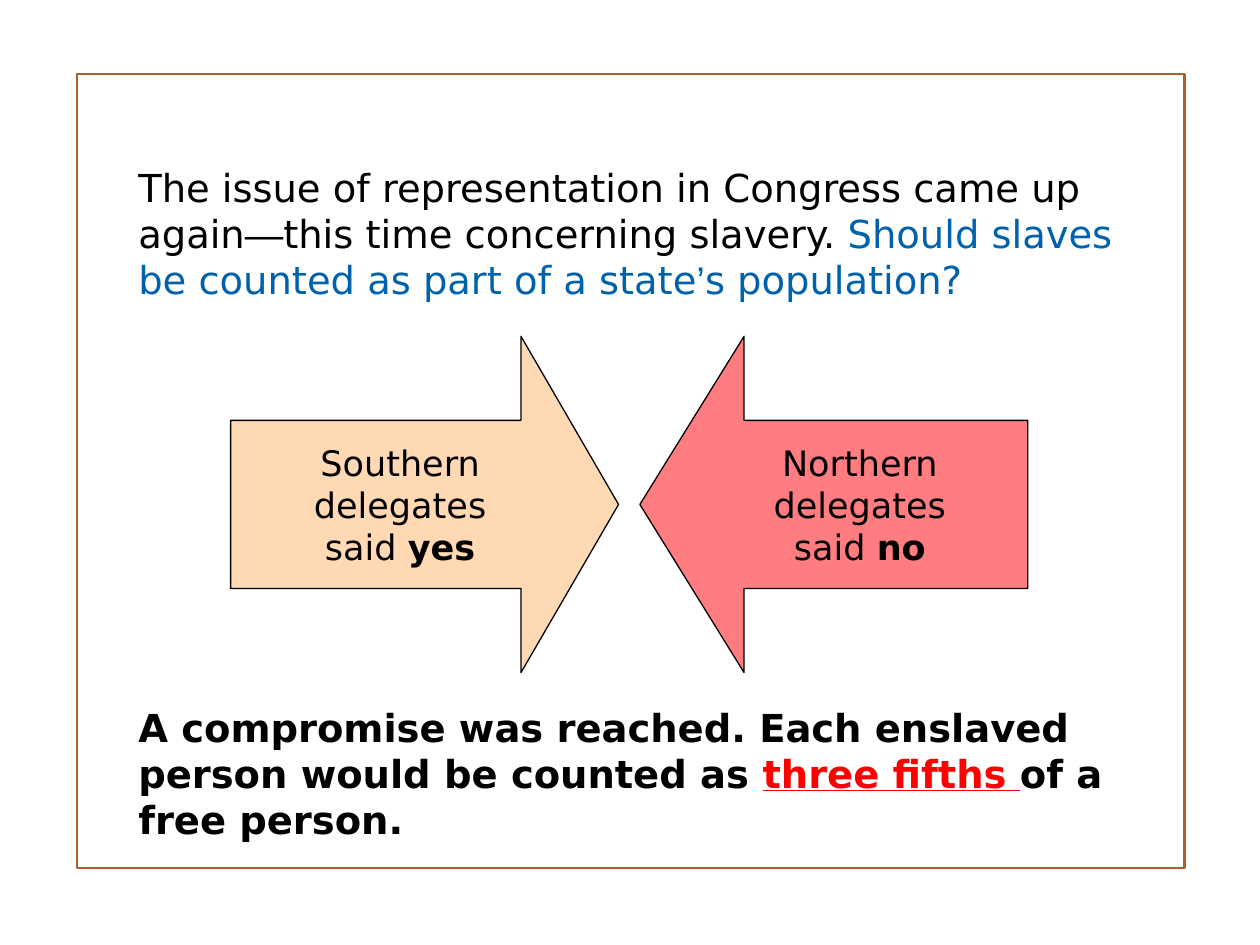
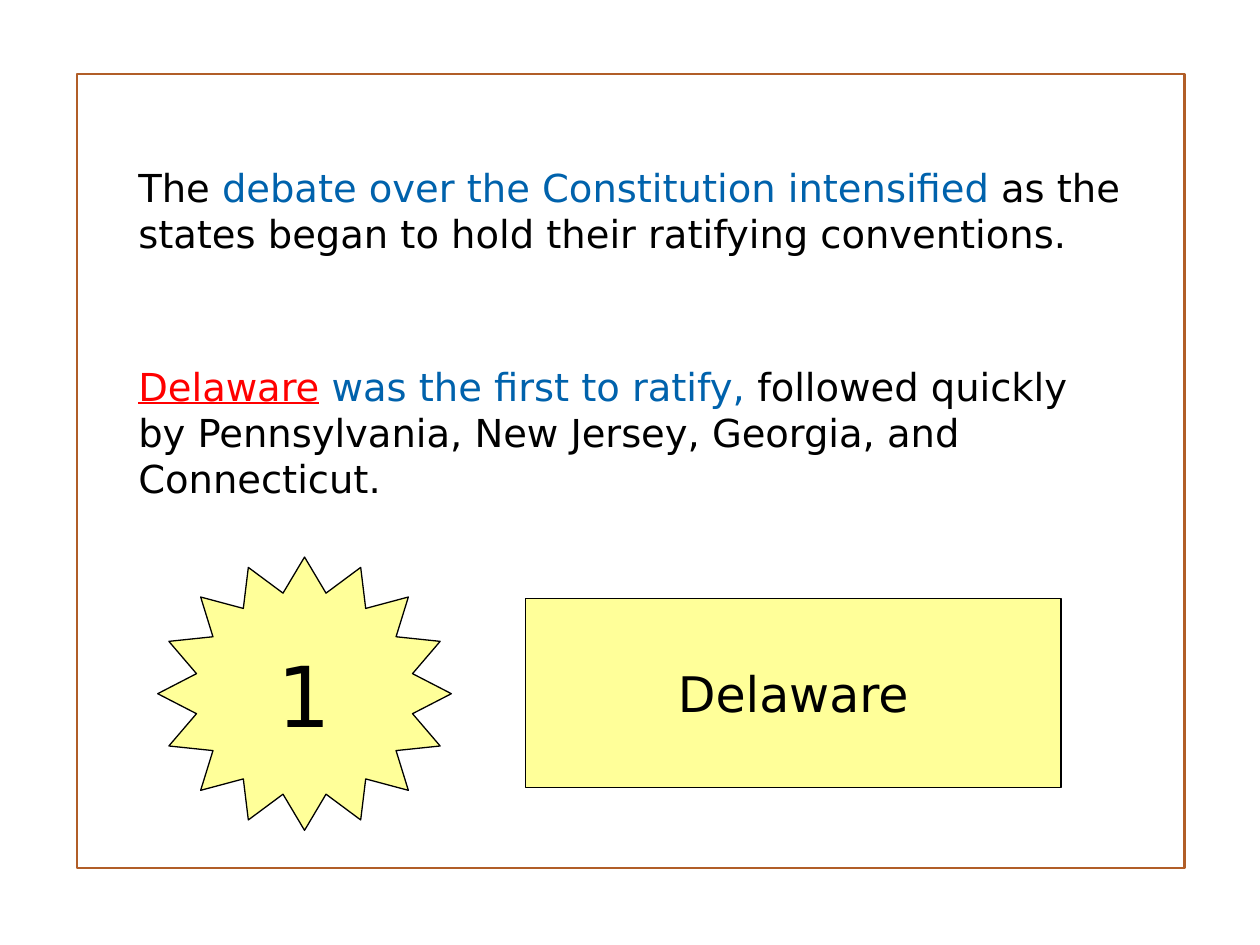
from dataclasses import dataclass
from typing import Optional

from lxml.etree import SubElement
from pptx import Presentation
from pptx.dml.color import RGBColor
from pptx.enum.shapes import MSO_SHAPE
from pptx.enum.text import MSO_ANCHOR, MSO_AUTO_SIZE, PP_ALIGN
from pptx.oxml.ns import qn
from pptx.util import Cm, Pt

# Shared style
FONT, PUNCTUATION_FONT = "DejaVu Sans", "Arial"
BLACK, BLUE, RED, BROWN = "000000", "0062AC", "FF0000", "B15E28"
ORANGE, PINK, YELLOW = "FFCC99", "FF7C80", "FFFF99"
TEXT_LEFT, TEXT_WIDTH, TEXT_SIZE = 2.54, 20.32, 22


@dataclass(frozen=True)
class Phrase:
    text: str
    colour: str = BLACK
    bold: bool = False
    underline: bool = False
    font: str = FONT


@dataclass(frozen=True)
class Passage:
    top: float
    height: float
    phrases: tuple[Phrase, ...]


@dataclass(frozen=True)
class Figure:
    kind: MSO_SHAPE
    box: tuple[float, float, float, float]
    fill: str
    size: int
    lines: tuple[tuple[Phrase, ...], ...]
    adjustments: tuple[float, ...] = ()
    opacity: Optional[int] = None


def colour(value: str) -> RGBColor:
    return RGBColor.from_string(value)


def write_phrases(paragraph, phrases: tuple[Phrase, ...], size: int) -> None:
    for phrase in phrases:
        run = paragraph.add_run()
        run.text = phrase.text
        run.font.name = phrase.font
        run.font.size = Pt(size)
        run.font.bold = phrase.bold
        run.font.underline = phrase.underline
        run.font.color.rgb = colour(phrase.colour)


def add_outlined(slide, kind: MSO_SHAPE, box: tuple[float, ...], line: str, width: float):
    outlined = slide.shapes.add_shape(kind, *map(Cm, box))
    outlined.shadow.inherit = False
    outlined.line.color.rgb = colour(line)
    outlined.line.width = Pt(width)
    return outlined


def add_frame_to_layout(slide) -> None:
    """Draw the border and move it behind everything in the shared layout."""
    frame = add_outlined(slide, MSO_SHAPE.RECTANGLE, (1.55, 1.5, 22.33, 16), BROWN, 1.25)
    frame.fill.background()
    frame.element.nvSpPr.cNvPr.id = 20
    slide.slide_layout.element.cSld.spTree.insert(2, frame.element)


def add_passage(slide, passage: Passage) -> None:
    box = (TEXT_LEFT, passage.top, TEXT_WIDTH, passage.height)
    frame = slide.shapes.add_textbox(*map(Cm, box)).text_frame
    frame.word_wrap = True
    frame.auto_size = MSO_AUTO_SIZE.SHAPE_TO_FIT_TEXT
    write_phrases(frame.paragraphs[0], passage.phrases, TEXT_SIZE)


def add_figure(slide, figure: Figure) -> None:
    drawn = add_outlined(slide, figure.kind, figure.box, BLACK, 0.75)
    for index, value in enumerate(figure.adjustments):
        drawn.adjustments[index] = value
    drawn.fill.solid()
    drawn.fill.fore_color.rgb = colour(figure.fill)
    if figure.opacity is not None:
        fill_colour = drawn.element.spPr.find(qn("a:solidFill"))[0]
        SubElement(fill_colour, qn("a:alpha"), val=str(figure.opacity * 1000))
    frame = drawn.text_frame
    frame.word_wrap = False
    frame.vertical_anchor = MSO_ANCHOR.MIDDLE
    for index, phrases in enumerate(figure.lines):
        paragraph = frame.add_paragraph() if index else frame.paragraphs[0]
        paragraph.alignment = PP_ALIGN.CENTER
        write_phrases(paragraph, phrases, figure.size)


def delegates_arrow(kind: MSO_SHAPE, left: float, fill: str, region: str, answer: str,
                    head: float, opacity: Optional[int] = None) -> Figure:
    lines = (
        (Phrase(region),),
        (Phrase("delegates"),),
        (Phrase("said "), Phrase(answer, bold=True)),
    )
    return Figure(kind, (left, 6.78, 7.82, 6.78), fill, 20, lines, (0.5, head), opacity)


# Slide 1: the three-fifths compromise
COMPROMISE = (
    Passage(3.18, 3.07, (
        Phrase("The issue of representation in Congress came up again"),
        Phrase("—", font=PUNCTUATION_FONT),
        Phrase("this time concerning slavery. "),
        Phrase("Should slaves be counted as part of a state", BLUE),
        Phrase("’", BLUE, font=PUNCTUATION_FONT),
        Phrase("s population?", BLUE),
    )),
    Passage(14.07, 3.07, (
        Phrase("A compromise was reached. Each enslaved person would be counted as ",
               bold=True),
        Phrase("three fifths ", RED, bold=True, underline=True),
        Phrase("of a free person.", bold=True),
    )),
    delegates_arrow(MSO_SHAPE.RIGHT_ARROW, 4.65, ORANGE, "Southern", "yes", 0.29, 73),
    delegates_arrow(MSO_SHAPE.LEFT_ARROW, 12.9, PINK, "Northern", "no", 0.31),
)

# Slide 2: the first state to ratify
RATIFICATION = (
    Passage(3.18, 3.07, (
        Phrase("The "),
        Phrase("debate over the Constitution intensified ", BLUE),
        Phrase("as the states began to hold their ratifying conventions."),
    )),
    Passage(7.19, 3.18, (
        Phrase("Delaware", RED, underline=True),
        Phrase(" was the first to ratify, ", BLUE),
        Phrase("followed quickly by Pennsylvania, New Jersey, Georgia, and Connecticut."),
    )),
    Figure(MSO_SHAPE.STAR_16_POINT, (3.18, 11.23, 5.92, 5.51), YELLOW, 48,
           ((Phrase("1"),),), (0.375,)),
    Figure(MSO_SHAPE.RECTANGLE, (10.59, 12.07, 10.8, 3.81), YELLOW, 28,
           ((Phrase("Delaware"),),)),
)


def main() -> None:
    presentation = Presentation()
    presentation.slide_width, presentation.slide_height = Cm(25.4), Cm(19.05)
    blank_layout = presentation.slide_layouts[6]
    for number, parts in enumerate((COMPROMISE, RATIFICATION)):
        slide = presentation.slides.add_slide(blank_layout)
        if number == 0:
            add_frame_to_layout(slide)
        for part in parts:
            if isinstance(part, Passage):
                add_passage(slide, part)
            else:
                add_figure(slide, part)
    presentation.save("out.pptx")


if __name__ == "__main__":
    main()
